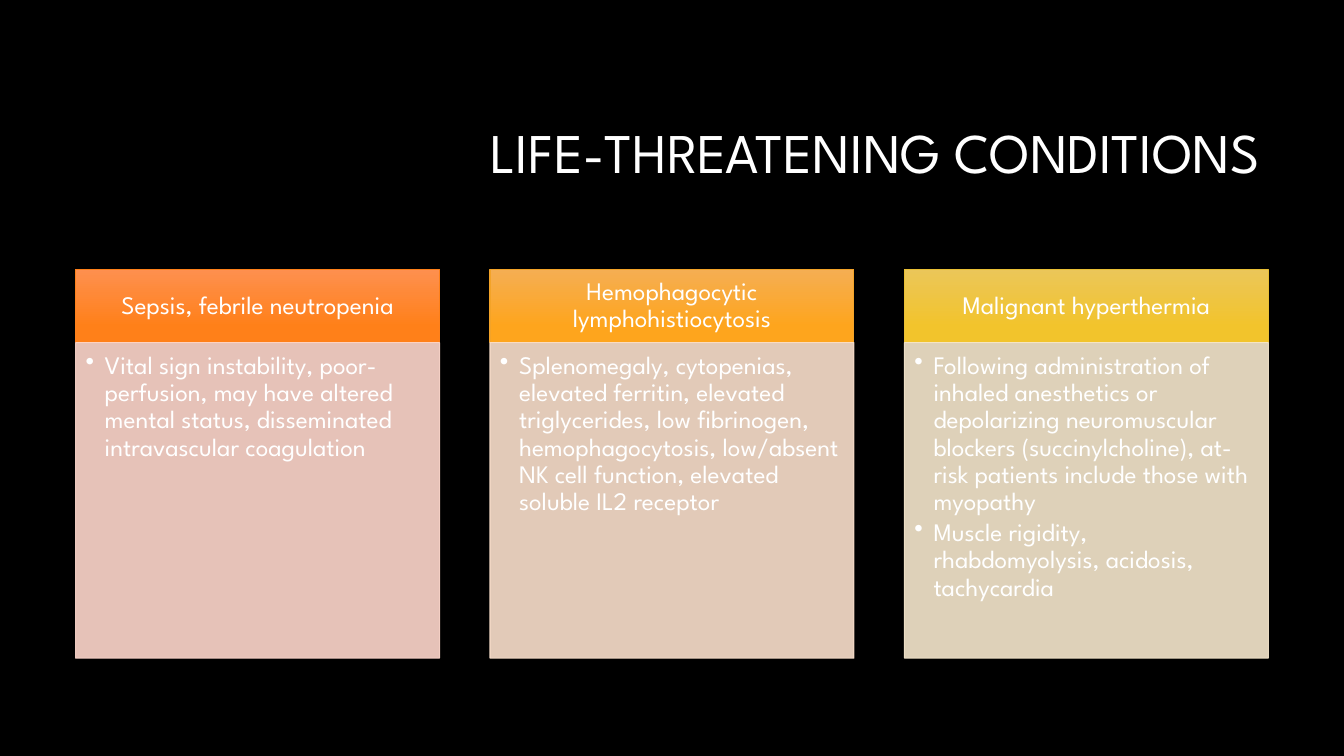
import lxml.etree
import pptx
import pptx.dml.color
import pptx.enum.shapes
import pptx.enum.text
import pptx.oxml.ns
import pptx.util

RGBColor = pptx.dml.color.RGBColor
Inches = pptx.util.Inches
Pt = pptx.util.Pt
ALIGN = pptx.enum.text.PP_ALIGN
ANCHOR = pptx.enum.text.MSO_ANCHOR
qn = pptx.oxml.ns.qn

BLACK = RGBColor(0x00, 0x00, 0x00)
WHITE = RGBColor(0xFF, 0xFF, 0xFF)
ORANGE = (RGBColor(0xFE, 0x90, 0x4F), RGBColor(0xFF, 0x80, 0x19),
          RGBColor(0xFE, 0x80, 0x1A), RGBColor(0xFF, 0xD8, 0xCD))
AMBER = (RGBColor(0xF5, 0xAE, 0x53), RGBColor(0xFE, 0xA5, 0x1D),
         RGBColor(0xF3, 0xA3, 0x28), RGBColor(0xFB, 0xE1, 0xCD))
GOLD = (RGBColor(0xEB, 0xC6, 0x59), RGBColor(0xF2, 0xC4, 0x2C),
        RGBColor(0xE9, 0xBF, 0x35), RGBColor(0xF7, 0xE8, 0xCE))

FONT = "League Spartan"
SLIDE_WIDTH, SLIDE_HEIGHT = 13.33, 7.5
TITLE_BOX = (3.17, 0.84, 9.42, 1.41)
CARDS_BOX = (0.75, 2.67, 11.83, 3.86)
CARD_GAP = 0.5
HEADING_HEIGHT = 0.73
BULLET_INDENT = 0.19

CONDITIONS = [
    ("Sepsis, febrile neutropenia", ORANGE,
     ["Vital sign instability, poor-perfusion, may have altered mental status, "
      "disseminated intravascular coagulation"]),
    ("Hemophagocytic lymphohistiocytosis", AMBER,
     ["Splenomegaly, cytopenias, elevated ferritin, elevated triglycerides, "
      "low fibrinogen, hemophagocytosis, low/absent NK cell function, "
      "elevated soluble IL2 receptor"]),
    ("Malignant hyperthermia", GOLD,
     ["Following administration of inhaled anesthetics or depolarizing "
      "neuromuscular blockers (succinylcholine), at-risk patients include "
      "those with myopathy",
      "Muscle rigidity, rhabdomyolysis, acidosis, tachycardia"]),
]


def write_text(shape, paragraphs, size=18, align=ALIGN.LEFT, anchor=ANCHOR.MIDDLE,
               insets=(0.1, 0.05, 0.1, 0.05), bulleted=False, space_after=0):
    frame = shape.text_frame
    frame.word_wrap = True
    frame.vertical_anchor = anchor
    (frame.margin_left, frame.margin_top,
     frame.margin_right, frame.margin_bottom) = map(Inches, insets)
    frame.text = "\n".join(paragraphs)
    for paragraph in frame.paragraphs:
        paragraph.alignment = align
        paragraph.line_spacing = 0.9
        paragraph.space_after = Pt(space_after)
        if bulleted:
            add_bullet(paragraph)
        paragraph.font.name = FONT
        paragraph.font.size = Pt(size)
        paragraph.font.color.rgb = WHITE


def add_bullet(paragraph):
    properties = paragraph._p.get_or_add_pPr()
    properties.set("marL", str(Inches(BULLET_INDENT)))
    properties.set("indent", str(-Inches(BULLET_INDENT)))
    lxml.etree.SubElement(properties, qn("a:buChar"), char="•")


def set_opacity(shape, percent):
    for color in shape.element.spPr.iter(qn("a:srgbClr")):
        lxml.etree.SubElement(color, qn("a:alpha"), val=str(percent * 1000))


def add_rectangle(slide, box, line_color):
    shape = slide.shapes.add_shape(
        pptx.enum.shapes.MSO_SHAPE.RECTANGLE, *map(Inches, box))
    shape.shadow.inherit = False
    shape.line.color.rgb = line_color
    shape.line.width = Pt(0.75)
    return shape


def add_title(slide, box, text):
    write_text(slide.shapes.add_textbox(*map(Inches, box)), [text],
               size=40, align=ALIGN.RIGHT)


def add_card(slide, box, heading, colors, points):
    left, top, width, height = box
    top_color, bottom_color, line_color, body_color = colors

    header = add_rectangle(slide, (left, top, width, HEADING_HEIGHT), line_color)
    header.fill.gradient()
    header.fill.gradient_angle = 270
    stops = zip(header.fill.gradient_stops, (0, 0.78), (top_color, bottom_color))
    for stop, position, color in stops:
        stop.position = position
        stop.color.rgb = color
    write_text(header, [heading], align=ALIGN.CENTER, insets=(0.14, 0.08, 0.14, 0.08))

    body_box = (left, top + HEADING_HEIGHT, width, height - HEADING_HEIGHT)
    body = add_rectangle(slide, body_box, body_color)
    body.fill.solid()
    body.fill.fore_color.rgb = body_color
    set_opacity(body, 90)
    write_text(body, points, anchor=ANCHOR.TOP, insets=(0.1, 0.1, 0.14, 0.16),
               bulleted=True, space_after=2.7)


def add_cards(slide, box, conditions):
    left, top, width, height = box
    card_width = (width - CARD_GAP * (len(conditions) - 1)) / len(conditions)
    for column, condition in enumerate(conditions):
        card_left = left + column * (card_width + CARD_GAP)
        add_card(slide, (card_left, top, card_width, height), *condition)


def main():
    presentation = pptx.Presentation()
    presentation.slide_width = Inches(SLIDE_WIDTH)
    presentation.slide_height = Inches(SLIDE_HEIGHT)
    slide = presentation.slides.add_slide(presentation.slide_layouts[6])
    slide.background.fill.solid()
    slide.background.fill.fore_color.rgb = BLACK
    add_title(slide, TITLE_BOX, "LIFE-THREATENING CONDITIONS")
    add_cards(slide, CARDS_BOX, CONDITIONS)
    presentation.save("out.pptx")


if __name__ == "__main__":
    main()
